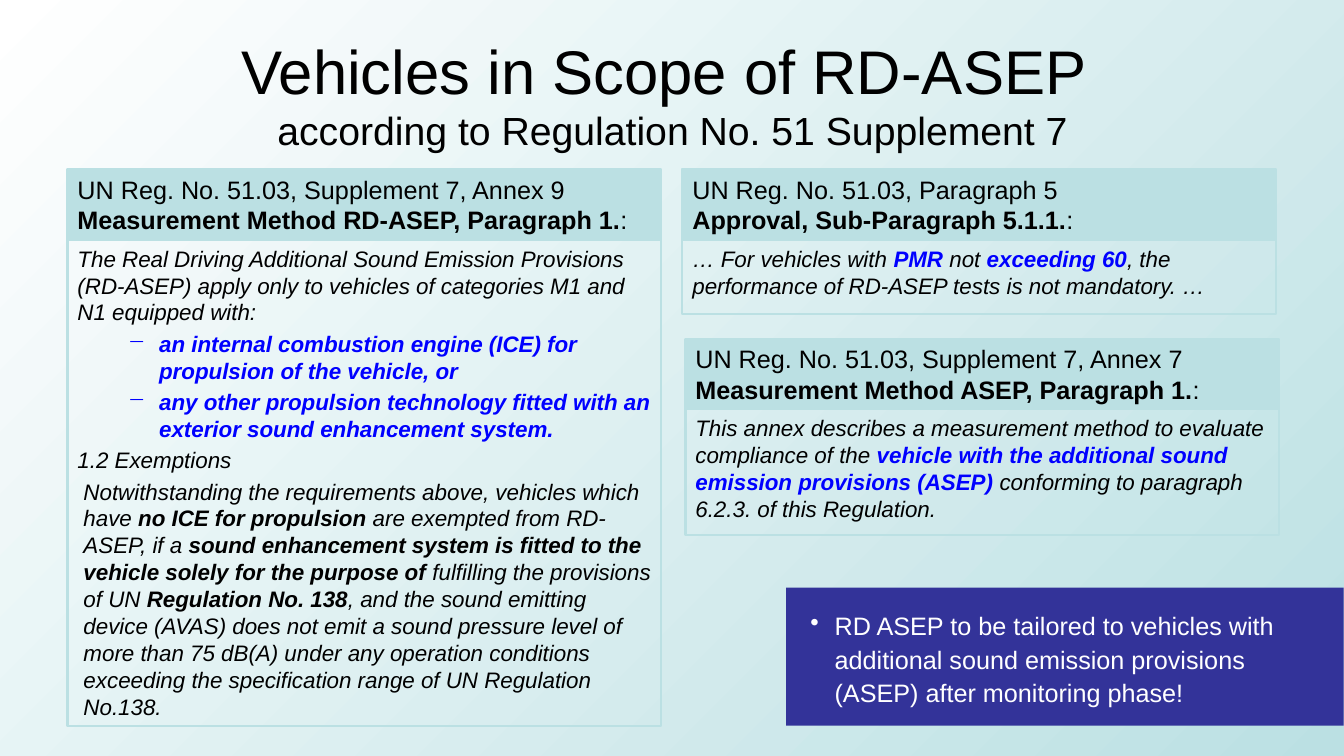
from lxml import etree
from pptx import Presentation
from pptx import util as u
from pptx.dml.color import RGBColor
from pptx.enum import shapes, text
from pptx.oxml.ns import qn

COLORS = {"white": "FFFFFF", "black": "000000", "teal": "BBE0E3",
          "blue": "0000FF", "navy": "333399"}
LEFT, RIGHT, RIGHT_LOWER = 0.67, 6.77, 6.8
PANEL_W, HEADER_H = 5.89, 0.7


def rgb(name):
    return RGBColor.from_string(COLORS[name])


def write(p, segments, size, color="black", italic=False, indent=None, bullet=None):
    """Fill a paragraph from (text, style) pairs; style is "", "bold" or "blue" (bold too)."""
    if indent:
        pPr = p._p.get_or_add_pPr()
        pPr.set("marL", str(u.Inches(indent[0])))
        pPr.set("indent", str(u.Inches(indent[1])))
        if bullet:
            etree.SubElement(pPr, qn("a:buChar")).set("char", bullet)
    for words, style in segments:
        if words == "\n":
            p.add_line_break()
            continue
        r = p.add_run()
        r.text = words
        r.font.name, r.font.size = "Arial", u.Pt(size)
        r.font.bold, r.font.italic = bool(style), italic
        r.font.color.rgb = rgb("blue" if style == "blue" else color)


prs = Presentation()
prs.slide_width, prs.slide_height = u.Inches(13.333), u.Inches(7.5)
slide = prs.slides.add_slide(prs.slide_layouts[5])

bg = slide.background.fill
bg.gradient()
bg.gradient_angle = 315
for stop, name in zip(bg.gradient_stops, ("white", "teal")):
    stop.color.rgb = rgb(name)

title = slide.shapes.title
title.left, title.top, title.width, title.height = map(u.Inches, (LEFT, 0.3, 12, 1.25))
tf = title.text_frame
tf.auto_size = text.MSO_AUTO_SIZE.NONE
tf.vertical_anchor = text.MSO_ANCHOR.MIDDLE
p = tf.paragraphs[0]
p.alignment = text.PP_ALIGN.CENTER
write(p, [("Vehicles in Scope of RD-ASEP ", ""), ("\n", "")], 44)
write(p, [("according to Regulation No. 51 Supplement 7", "")], 28)

# Each panel: left, top, body height, header lines, body paragraphs (segments, indent, bullet)
DASH = ((0.81, -0.31), "−")
panels = [
    (LEFT, 1.68, 4.82, "UN Reg. No. 51.03, Supplement 7, Annex 9",
     "Measurement Method RD-ASEP, Paragraph 1.", [
         ([("The Real Driving Additional Sound Emission Provisions (RD-ASEP) apply only to "
            "vehicles of categories M1 and N1 equipped with:", "")], None, None),
         ([("an internal combustion engine (ICE) for propulsion of the vehicle, or", "blue")],
          *DASH),
         ([("any other propulsion technology fitted with an exterior sound enhancement system.",
            "blue")], *DASH),
         ([("1.2 Exemptions", "")], None, None),
         ([("Notwithstanding the requirements above, vehicles which have ", ""),
           ("no ICE for propulsion ", "bold"),
           ("are exempted from RD-ASEP, if a ", ""),
           ("sound enhancement system is fitted to the vehicle solely for the purpose of ",
            "bold"),
           ("fulfilling the provisions of UN ", ""),
           ("Regulation No. 138", "bold"),
           (", and the sound emitting device (AVAS) does not emit a sound pressure level of "
            "more than 75 dB(A) under any operation conditions exceeding the specification "
            "range of UN Regulation No.138.", "")], (0.06, 0), None)]),
    (RIGHT, 1.68, 0.74, "UN Reg. No. 51.03, Paragraph 5",
     "Approval, Sub-Paragraph 5.1.1.", [
         ([("… For vehicles with ", ""), ("PMR", "blue"), (" not ", ""),
           ("exceeding 60", "blue"),
           (", the performance of RD-ASEP tests is not mandatory. …", "")], None, None)]),
    (RIGHT_LOWER, 3.36, 1.25, "UN Reg. No. 51.03, Supplement 7, Annex 7",
     "Measurement Method ASEP, Paragraph 1.", [
         ([("This annex describes a measurement method to evaluate compliance of the ", ""),
           ("vehicle with the additional sound emission provisions (ASEP) ", "blue"),
           ("conforming to paragraph 6.2.3. of this Regulation.", "")], None, None)]),
]

# Each box: position and size, fill, line, anchor, font size, text colour, italic, paragraphs
boxes = []
for left, top, body_h, source, heading, body in panels:
    header = [([(source, ""), ("\n", ""), (heading, "bold"), (":", "")], None, None)]
    boxes.append(((left, top, PANEL_W, HEADER_H), "teal", "teal",
                  text.MSO_ANCHOR.BOTTOM, 18, "black", False, header))
    boxes.append(((left, top + HEADER_H, PANEL_W, body_h), None, "teal",
                  text.MSO_ANCHOR.TOP, 16, "black", True, body))
callout = [([("RD ASEP to be tailored to vehicles with additional sound emission provisions "
              "(ASEP) after monitoring phase!", "")], (0.24, -0.24), "•")]
boxes.append(((7.8, 5.83, 5.53, 1.37), "navy", None,
              text.MSO_ANCHOR.TOP, 18, "white", False, callout))

for place, fill, line, anchor, size, color, italic, paragraphs in boxes:
    sp = slide.shapes.add_shape(shapes.MSO_SHAPE.RECTANGLE, *map(u.Inches, place))
    sp.shadow.inherit = False
    if fill:
        sp.fill.solid()
        sp.fill.fore_color.rgb = rgb(fill)
    else:
        sp.fill.background()
    if line:
        sp.line.color.rgb = rgb(line)
        sp.line.width = u.Pt(1.5)
    else:
        sp.line.fill.background()
    tf = sp.text_frame
    tf.word_wrap = True
    tf.vertical_anchor = anchor
    for i, (segments, indent, bullet) in enumerate(paragraphs):
        p = tf.add_paragraph() if i else tf.paragraphs[0]
        p.alignment = text.PP_ALIGN.LEFT
        write(p, segments, size, color, italic, indent, bullet)
        if i:
            p.space_before = u.Pt(3.2)

# The callout comes last and has wider margins and looser lines
tf.margin_left = tf.margin_right = u.Inches(0.24)
tf.margin_top = tf.margin_bottom = u.Inches(0.2)
p.line_spacing = 1.1

prs.save("out.pptx")
